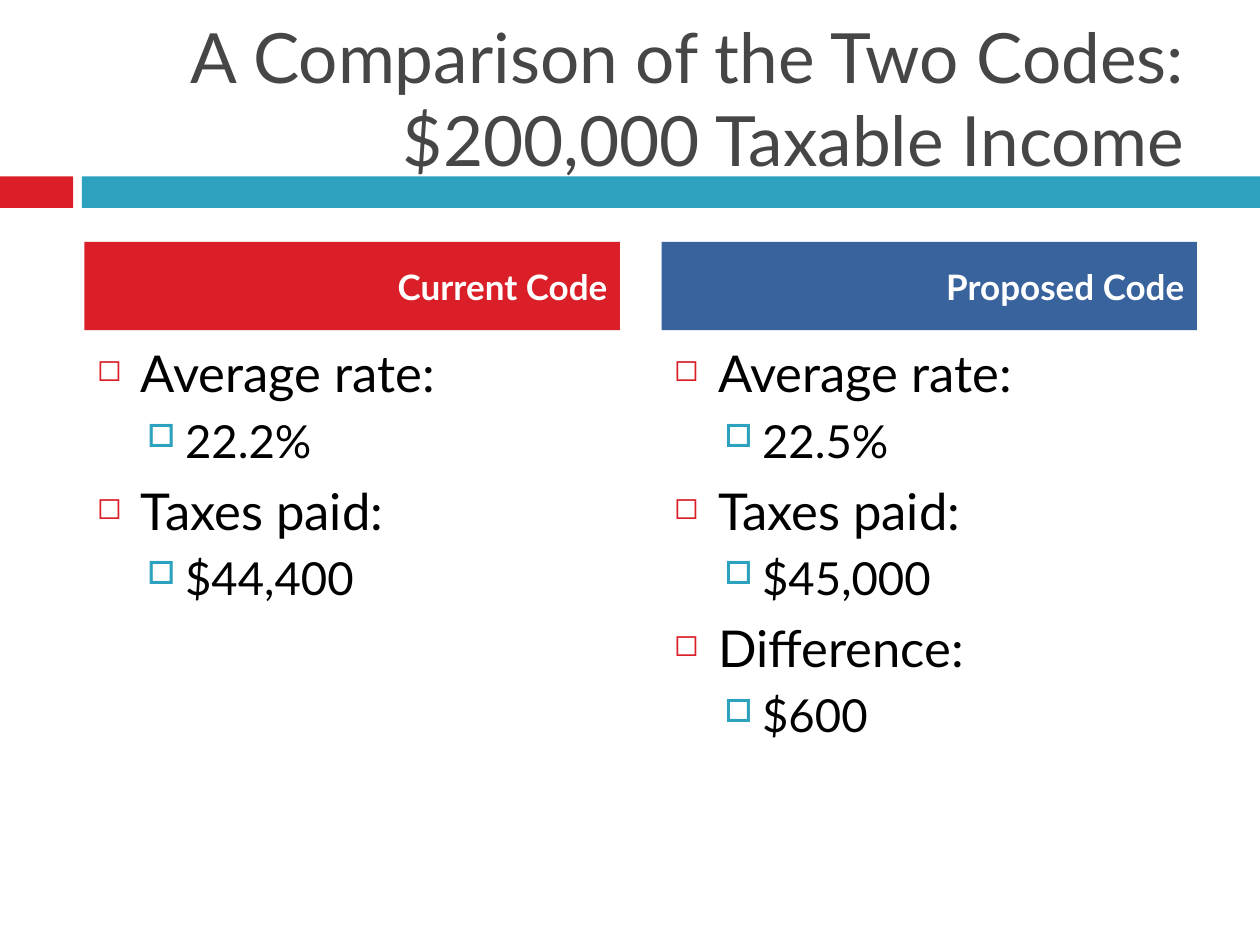
from dataclasses import dataclass

from lxml.etree import SubElement
from pptx import Presentation
from pptx.dml.color import RGBColor
from pptx.enum.shapes import MSO_SHAPE
from pptx.enum.text import MSO_ANCHOR, MSO_AUTO_SIZE, PP_ALIGN
from pptx.oxml.ns import qn
from pptx.util import Inches, Pt


@dataclass(frozen=True)
class Level:
    size: float
    space_before: float
    margin: float
    hanging: float
    bullet: str
    bullet_color: str
    bullet_percent: int


@dataclass(frozen=True)
class Theme:
    font: str = "Lato"
    red: str = "DA1F28"
    teal: str = "2DA2BF"
    blue: str = "39639D"
    title_color: str = "464646"
    text_color: str = "000000"
    header_color: str = "FFFFFF"
    title_size: float = 39.6
    header_size: float = 20


THEME = Theme()
LEVELS = (
    Level(29, 7, 0.35, 0.35, "◻", THEME.red, 60),
    Level(26, 5.5, 0.7, 0.3, "□", THEME.teal, 70),
)

SLIDE_WIDTH, SLIDE_HEIGHT = 10, 7.5
RIGHT_EDGE = 9.5
COLUMN_LEFT, COLUMN_WIDTH, COLUMN_GAP = 0.67, 4.25, 0.33
COLUMN_TOP, COLUMN_HEIGHT = 1.92, 4.67
HEADER_SHARE, BODY_SHARE = 0.15, 0.84

COLUMNS = (
    ("Current Code", THEME.red,
     (("Average rate:", "22.2%"), ("Taxes paid:", "$44,400"))),
    ("Proposed Code", THEME.blue,
     (("Average rate:", "22.5%"), ("Taxes paid:", "$45,000"),
      ("Difference:", "$600"))),
)


def inches(box):
    return [Inches(length) for length in box]


def style(paragraph, size, color, bold=False):
    font = paragraph.font
    font.name, font.size, font.bold = THEME.font, Pt(size), bold
    font.color.rgb = RGBColor.from_string(color)


def add_block(slide, box, color):
    """Add a plain filled rectangle without outline or shadow."""
    shape = slide.shapes.add_shape(MSO_SHAPE.RECTANGLE, *inches(box))
    shape.shadow.inherit = False
    shape.fill.solid()
    shape.fill.fore_color.rgb = RGBColor.from_string(color)
    shape.line.fill.background()
    return shape


def add_band(slide, box):
    """Add the red tab and the teal bar, split by a narrow gap."""
    left, top, width, height = box
    tab, bar_start = 0.058 * width, 0.065 * width
    add_block(slide, (left, top, tab, height), THEME.red)
    add_block(slide, (left + bar_start, top, width - bar_start, height), THEME.teal)


def place_title(slide, box, text):
    title = slide.shapes.title
    title.left, title.top, title.width, title.height = inches(box)
    frame = title.text_frame
    frame.text = text
    frame.word_wrap = True
    frame.auto_size = MSO_AUTO_SIZE.NONE
    frame.vertical_anchor = MSO_ANCHOR.MIDDLE
    paragraph = frame.paragraphs[0]
    paragraph.alignment = PP_ALIGN.RIGHT
    style(paragraph, THEME.title_size, THEME.title_color)


def add_header(slide, box, text, color):
    frame = add_block(slide, box, color).text_frame
    frame.text = text
    frame.vertical_anchor = MSO_ANCHOR.MIDDLE
    paragraph = frame.paragraphs[0]
    paragraph.alignment = PP_ALIGN.RIGHT
    style(paragraph, THEME.header_size, THEME.header_color, bold=True)


def format_bullet(paragraph, depth):
    level = LEVELS[depth]
    paragraph.level = depth
    paragraph.space_before = Pt(level.space_before)
    style(paragraph, level.size, THEME.text_color)
    properties = paragraph._p.get_or_add_pPr()
    properties.set("marL", str(Inches(level.margin)))
    properties.set("indent", str(-Inches(level.hanging)))
    bullet_color = SubElement(properties, qn("a:buClr"))
    SubElement(bullet_color, qn("a:srgbClr"), val=level.bullet_color)
    SubElement(properties, qn("a:buSzPct"), val=str(level.bullet_percent * 1000))
    SubElement(properties, qn("a:buChar"), char=level.bullet)
    # The default run properties must follow the bullet settings.
    properties.append(properties.find(qn("a:defRPr")))


def add_facts(slide, box, facts):
    """Add each label as a bullet with its value one level below."""
    frame = slide.shapes.add_textbox(*inches(box)).text_frame
    frame.word_wrap = True
    lines = [(text, depth) for fact in facts for depth, text in enumerate(fact)]
    frame.text = "\n".join(text for text, _ in lines)
    for paragraph, (_, depth) in zip(frame.paragraphs, lines):
        format_bullet(paragraph, depth)


def add_column(slide, box, heading, color, facts):
    left, top, width, height = box
    body_height = BODY_SHARE * height
    body_top = top + height - body_height
    add_header(slide, (left, top, width, HEADER_SHARE * height), heading, color)
    add_facts(slide, (left, body_top, width, body_height), facts)


def main():
    presentation = Presentation()
    presentation.slide_width = Inches(SLIDE_WIDTH)
    presentation.slide_height = Inches(SLIDE_HEIGHT)
    slide = presentation.slides.add_slide(presentation.slide_layouts[5])

    add_band(slide, (0, 1.4, SLIDE_WIDTH, 0.25))
    place_title(slide, (0.58, 0.3, RIGHT_EDGE - 0.58, 0.95),
                "A Comparison of the Two Codes:\v$200,000 Taxable Income")
    for index, column in enumerate(COLUMNS):
        left = COLUMN_LEFT + index * (COLUMN_WIDTH + COLUMN_GAP)
        add_column(slide, (left, COLUMN_TOP, COLUMN_WIDTH, COLUMN_HEIGHT), *column)

    presentation.save("out.pptx")


if __name__ == "__main__":
    main()
